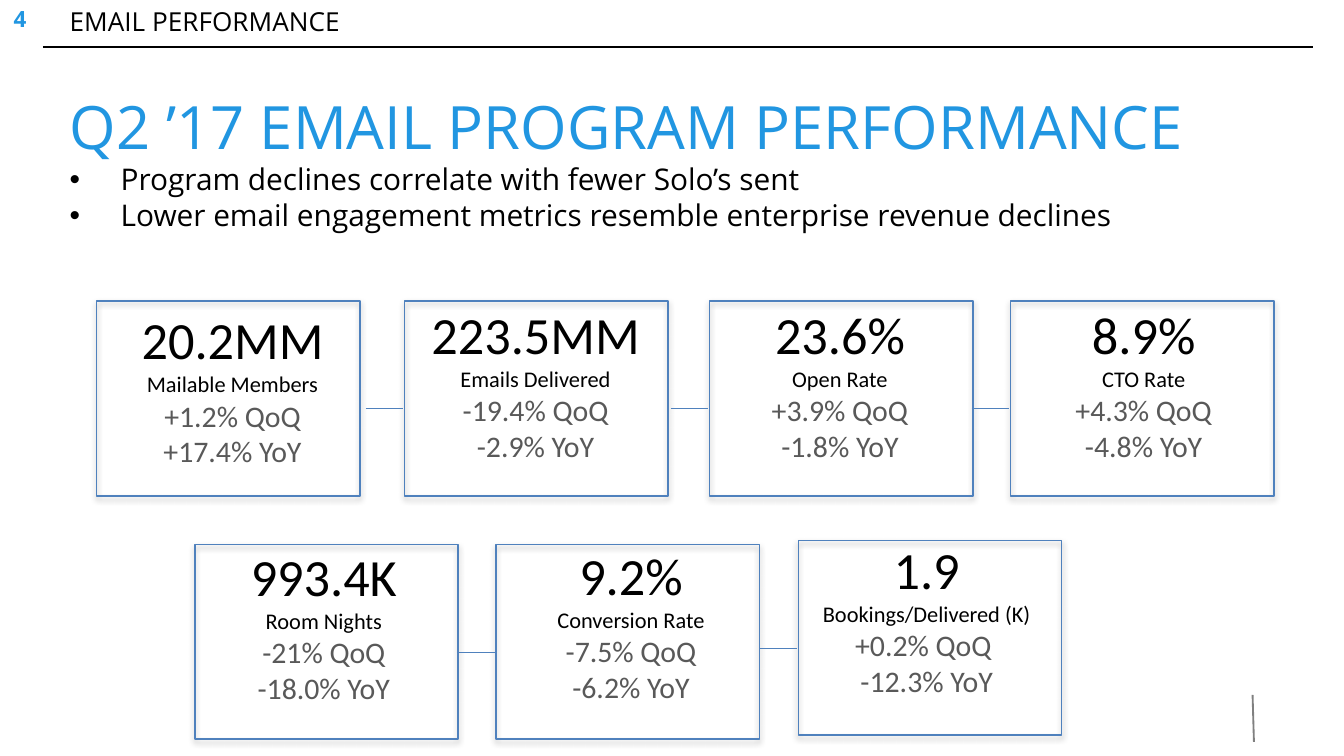
import pptx
import pptx.util
import pptx.dml.color
import pptx.enum.shapes
import pptx.enum.text
import pptx.oxml
from pptx.oxml.ns import qn
from lxml import etree

Inches, Pt = pptx.util.Inches, pptx.util.Pt
ALIGN, ANCHOR = pptx.enum.text.PP_ALIGN, pptx.enum.text.MSO_ANCHOR
RECTANGLE = pptx.enum.shapes.MSO_SHAPE.RECTANGLE
STRAIGHT = pptx.enum.shapes.MSO_CONNECTOR.STRAIGHT

BLACK, WHITE, GREY = "000000", "FFFFFF", "595959"
BRIGHT_BLUE, FRAME_BLUE = "2196E1", "4F81BD"
FRAME_WIDTH, FRAME_HEIGHT = 1.96, 1.45

SECTION = "EMAIL PERFORMANCE"
PAGE_NUMBER = "4"
HEADLINE = "Q2 ’17 EMAIL PROGRAM PERFORMANCE"
TAKEAWAYS = [
    "Program declines correlate with fewer Solo’s sent",
    "Lower email engagement metrics resemble enterprise revenue declines",
]
METRIC_ROWS = [
    [
        ((0.72, 2.24), (0.77, 2.24, 1.92, 1.62),
         ("20.2MM", "Mailable Members", "+1.2% QoQ", "+17.4% YoY")),
        ((3.01, 2.24), (2.86, 2.2, 2.25, 1.35),
         ("223.5MM", "Emails Delivered", "-19.4% QoQ", "-2.9% YoY")),
        ((5.28, 2.24), (5.28, 2.2, 1.94, 1.35),
         ("23.6%", "Open Rate", "+3.9% QoQ", "-1.8% YoY")),
        ((7.52, 2.24), (7.61, 2.2, 1.8, 1.35),
         ("8.9%", "CTO Rate", "+4.3% QoQ", "-4.8% YoY")),
    ],
    [
        ((1.45, 4.05), (1.61, 4, 1.6, 1.35),
         ("993.4K", "Room Nights", "-21% QoQ", "-18.0% YoY")),
        ((3.69, 4.05), (3.3, 3.99, 2.79, 1.35),
         ("9.2%", "Conversion Rate", "-7.5% QoQ", "-6.2% YoY")),
        ((5.94, 4.02), (5.5, 3.95, 2.79, 1.35),
         ("1.9", "Bookings/Delivered (K)", "+0.2% QoQ ", "-12.3% YoY")),
    ],
]
METRIC_STYLES = [(28, BLACK), (12, BLACK), (16, GREY), (16, GREY)]


def rgb(value):
    return pptx.dml.color.RGBColor.from_string(value)


def write(frame, lines, font, styles, align=ALIGN.LEFT, anchor=ANCHOR.TOP,
          bold=False, bullet=False):
    frame.word_wrap = True
    frame.vertical_anchor = anchor
    for index, (line, (size, color)) in enumerate(zip(lines, styles)):
        paragraph = frame.paragraphs[0] if index == 0 else frame.add_paragraph()
        paragraph.alignment = align
        if bullet:
            properties = paragraph._p.get_or_add_pPr()
            properties.set("marL", str(Inches(0.38)))
            properties.set("indent", str(-Inches(0.38)))
            etree.SubElement(properties, qn("a:buFont")).set("typeface", "Arial")
            etree.SubElement(properties, qn("a:buChar")).set("char", "•")
        run = paragraph.add_run()
        run.text = line
        run.font.name, run.font.size, run.font.bold = font, Pt(size), bold
        run.font.color.rgb = rgb(color)


def add_text(slide, box, lines, size, color, **options):
    text = slide.shapes.add_textbox(*map(Inches, box))
    write(text.text_frame, lines, "Open Sans", [(size, color)] * len(lines), **options)


def add_rule(slide, start, end, color, width):
    rule = slide.shapes.add_connector(STRAIGHT, *map(Inches, start + end))
    rule.line.color.rgb = rgb(color)
    rule.line.width = Pt(width)
    etree.SubElement(rule._element.spPr, qn("a:effectLst"))


def add_outline(slide, box, color):
    outline = slide.shapes.add_shape(RECTANGLE, *map(Inches, box))
    outline.fill.background()
    outline.line.color.rgb = rgb(color)
    outline.line.width = Pt(0.75)
    outline.shadow.inherit = False
    return outline


def add_shadow(shape):
    effects = shape._element.spPr.find(qn("a:effectLst"))
    shadow = etree.SubElement(effects, qn("a:outerShdw"), blurRad=str(Pt(3.1)),
                              dist=str(Pt(1.8)), dir="5400000", rotWithShape="0")
    shade = etree.SubElement(shadow, qn("a:srgbClr"), val=BLACK)
    etree.SubElement(shade, qn("a:alpha"), val="35000")


def main():
    deck = pptx.Presentation()
    deck.slide_width = Inches(10)
    deck.slide_height = deck.slide_width * 9 // 16
    slide = deck.slides.add_slide(deck.slide_layouts[5])

    add_rule(slide, (0.32, 0.35), (9.77, 0.35), BLACK, 0.75)
    add_rule(slide, (9.32, 5.17), (9.33, 5.52), "808080", 1)
    add_text(slide, (0.42, -0.01, 7.65, 0.35), [SECTION], 14, BLACK)
    add_text(slide, (-0.15, -0.05, 0.6, 0.38), [PAGE_NUMBER], 12, BRIGHT_BLUE,
             align=ALIGN.CENTER, anchor=ANCHOR.MIDDLE, bold=True)

    headline = slide.shapes.title
    headline.left, headline.top = Inches(0.42), Inches(0.63)
    headline.width, headline.height = Inches(9.35), Inches(0.61)
    headline.text_frame.auto_size = pptx.enum.text.MSO_AUTO_SIZE.NONE
    headline.text_frame.margin_top = Inches(0.04)
    write(headline.text_frame, [HEADLINE], "Open Sans", [(32, BRIGHT_BLUE)])
    add_text(slide, (0.42, 1.15, 9.49, 0.64), TAKEAWAYS, 16, BLACK, bullet=True)

    for row in METRIC_ROWS:
        for _, text_box, lines in row:
            metric = add_outline(slide, text_box, WHITE)
            write(metric.text_frame, lines, "Calibri", METRIC_STYLES, align=ALIGN.CENTER)
    for row in METRIC_ROWS:
        for index, ((left, top), _, _) in enumerate(row):
            add_shadow(add_outline(slide, (left, top, FRAME_WIDTH, FRAME_HEIGHT), FRAME_BLUE))
            if index:
                middle = top + 0.8
                add_rule(slide, (left - 0.29, middle), (left - 0.01, middle), FRAME_BLUE, 0.25)

    deck.save("out.pptx")


if __name__ == "__main__":
    main()
